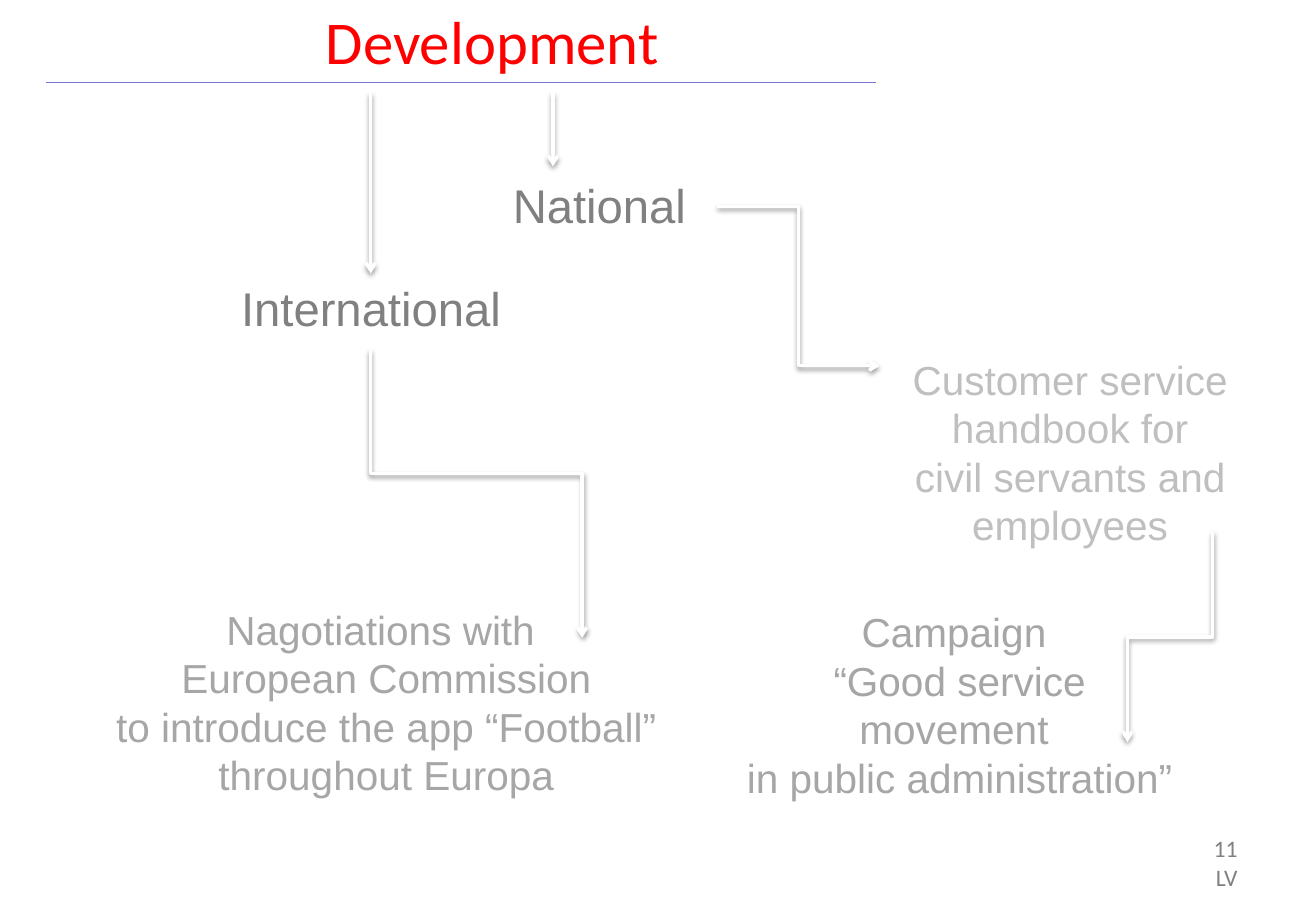
from dataclasses import dataclass

from lxml import etree
from pptx import Presentation
from pptx.dml.color import RGBColor
from pptx.enum import shapes, text
from pptx.oxml.ns import qn
from pptx.util import Cm, Pt


@dataclass(frozen=True)
class Theme:
    heading_font: str = "Calibri"
    body_font: str = "Arial"
    title_size: int = 36
    branch_size: int = 28
    detail_size: int = 24
    footer_size: int = 14
    red: str = "FF0000"
    dark: str = "808080"
    middle: str = "A6A6A6"
    light: str = "BFBFBF"
    rule: str = "7575D1"
    arrow: str = "FFFFFF"
    shadow: str = "000000"


THEME = Theme()
LEFT, CENTER, RIGHT = text.PP_ALIGN.LEFT, text.PP_ALIGN.CENTER, text.PP_ALIGN.RIGHT
TOP, BOTTOM = text.MSO_ANCHOR.TOP, text.MSO_ANCHOR.BOTTOM
TITLE_STYLE = (THEME.heading_font, THEME.title_size, THEME.red, CENTER, BOTTOM)
BRANCH_STYLE = (THEME.body_font, THEME.branch_size, THEME.dark, CENTER, TOP)
DETAIL_STYLE = (THEME.body_font, THEME.detail_size, THEME.middle, CENTER, TOP)
HANDBOOK_STYLE = (THEME.body_font, THEME.detail_size, THEME.light, CENTER, TOP)
FOOTER_STYLE = (THEME.heading_font, THEME.footer_size, THEME.dark, RIGHT, TOP)

# Lengths in centimetres: left, top, width, height
TEXTS = [
    (["Development"], (0.97, 0.15, 18.64, 1.57), TITLE_STYLE),
    (["National"], (9.7, 3.56, 5.66, 1.8), BRANCH_STYLE),
    (["International"], (3.45, 5.72, 8.61, 1.45), BRANCH_STYLE),
    (["Campaign ", "“Good service movement ", "in public administration”"],
     (15.16, 12.57, 9.8, 4.32), DETAIL_STYLE),
    (["Nagotiations with ", "European Commission",
      "to introduce the app “Football”", "throughout Europa"],
     (1.19, 12.52, 13.77, 4.32), DETAIL_STYLE),
    (["Customer service handbook for", "civil servants and employees"],
     (18.47, 7.29, 7.8, 4.32), HANDBOOK_STYLE),
    (["11", "LV"], (24.16, 17.32, 1.96, 1.4), FOOTER_STYLE),
]

TITLE_RULE = ((18.31, 1.73), (0.97, 1.73))

# Start, end, first direction of an elbow (None is straight), place of its bend
ARROWS = [
    ((11.56, 1.93), (11.56, 3.48), None, 0.5),
    ((7.75, 1.93), (7.75, 5.72), None, 0.5),
    ((7.75, 7.32), (12.17, 13.34), "down", 0.43),
    ((14.99, 4.32), (18.39, 7.65), "across", 0.5),
    ((25.35, 11.13), (23.57, 15.52), "down", 0.5),
]


def add_text(slide, lines, box, style):
    font_name, size, color, alignment, anchor = style
    frame = slide.shapes.add_textbox(*map(Cm, box)).text_frame
    frame.word_wrap = True
    frame.vertical_anchor = anchor
    for index, line in enumerate(lines):
        paragraph = frame.add_paragraph() if index else frame.paragraphs[0]
        paragraph.text = line
        paragraph.alignment = alignment
        paragraph.font.name = font_name
        paragraph.font.size = Pt(size)
        paragraph.font.color.rgb = RGBColor.from_string(color)


def add_line(slide, kind, start, end, color, width):
    """Add a connector; return it with its empty effect list."""
    connector = slide.shapes.add_connector(kind, *map(Cm, (*start, *end)))
    connector.line.color.rgb = RGBColor.from_string(color)
    connector.line.width = Pt(width)
    effects = etree.SubElement(connector._element.spPr, qn("a:effectLst"))
    return connector, effects


def turn_downwards(connector, to_right):
    """Turn an elbow so that it leaves its start vertically."""
    transform = connector._element.spPr.find(qn("a:xfrm"))
    transform.set("rot", str((270 if to_right else 90) * 60000))
    if to_right:
        transform.set("flipH", "1")


def add_arrow(slide, start, end, direction, bend):
    kind = shapes.MSO_CONNECTOR.ELBOW if direction else shapes.MSO_CONNECTOR.STRAIGHT
    first, last = start, end
    if direction == "down":
        middle_x, middle_y = (start[0] + end[0]) / 2, (start[1] + end[1]) / 2
        half_width, half_height = (end[1] - start[1]) / 2, abs(end[0] - start[0]) / 2
        first = (middle_x - half_width, middle_y - half_height)
        last = (middle_x + half_width, middle_y + half_height)
    connector, effects = add_line(slide, kind, first, last, THEME.arrow, 2)
    if direction == "down":
        turn_downwards(connector, end[0] > start[0])
    properties = connector._element.spPr
    if direction:
        adjustments = properties.find(qn("a:prstGeom")).find(qn("a:avLst"))
        etree.SubElement(adjustments, qn("a:gd"), name="adj1",
                         fmla=f"val {round(bend * 100000)}")
    etree.SubElement(properties.find(qn("a:ln")), qn("a:tailEnd"), type="arrow")
    shadow = etree.SubElement(effects, qn("a:outerShdw"), blurRad=str(Pt(3.1)),
                              dist=str(Pt(1.6)), dir="5400000", rotWithShape="0")
    shadow_color = etree.SubElement(shadow, qn("a:srgbClr"), val=THEME.shadow)
    etree.SubElement(shadow_color, qn("a:alpha"), val="38000")


def main():
    presentation = Presentation()
    presentation.slide_width, presentation.slide_height = Cm(27.51), Cm(19.05)
    slide = presentation.slides.add_slide(presentation.slide_layouts[6])
    add_line(slide, shapes.MSO_CONNECTOR.STRAIGHT, *TITLE_RULE, THEME.rule, 0.75)
    for lines, box, style in TEXTS:
        add_text(slide, lines, box, style)
    for arrow in ARROWS:
        add_arrow(slide, *arrow)
    presentation.save("out.pptx")


if __name__ == "__main__":
    main()
